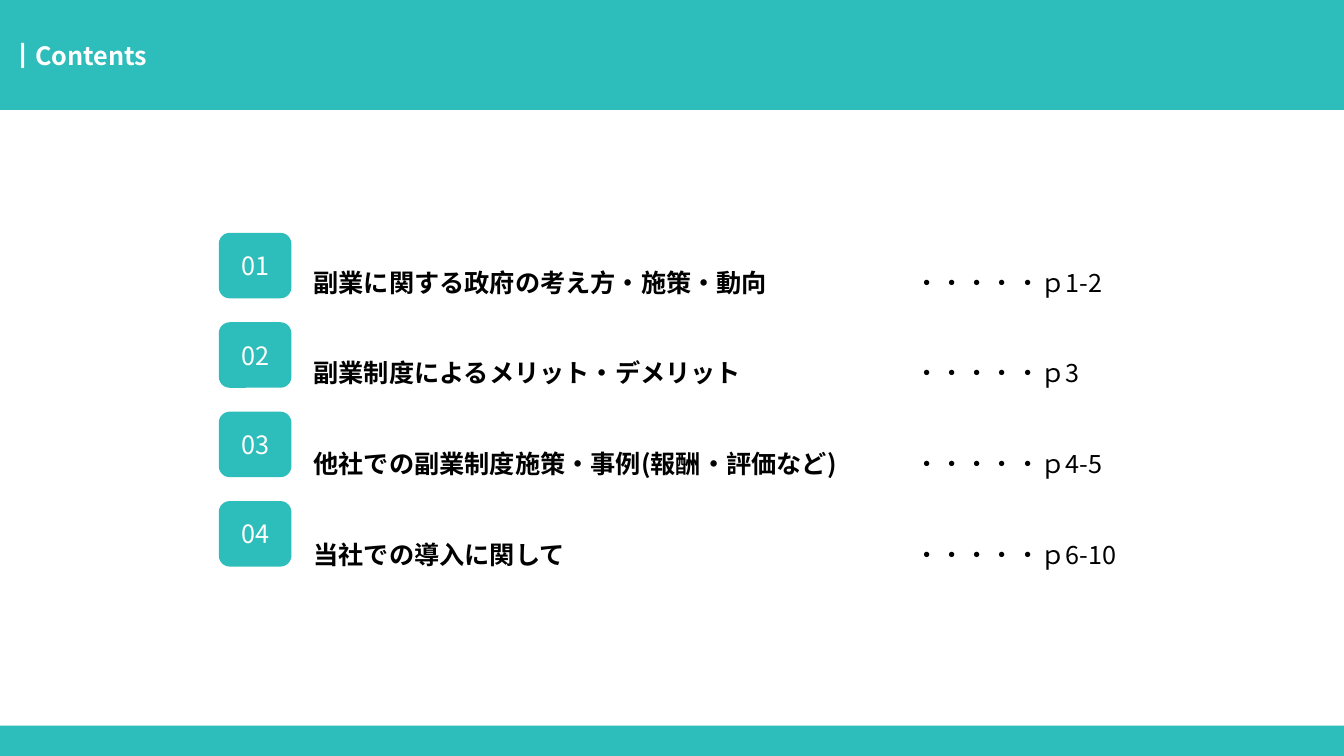
from lxml import etree
from pptx import Presentation
from pptx.dml.color import RGBColor
from pptx.enum import shapes as kinds, text as txt
from pptx.oxml import ns
from pptx.util import Inches, Pt

HEAD = "┃Contents"
ITEMS = [
    ("副業に関する政府の考え方・施策・動向", "1-2"),
    ("副業制度によるメリット・デメリット", "3"),
    ("他社での副業制度施策・事例(報酬・評価など)", "4-5"),
    ("当社での導入に関して", "6-10"),
]
DOTS = "・・・・・ｐ"
FACE = "Noto Sans CJK JP"
TEAL = RGBColor(0x2D, 0xBD, 0xBA)
WHITE = RGBColor(0xFF, 0xFF, 0xFF)
BLACK = RGBColor(0, 0, 0)
WIDE, HIGH = 13.33, 7.5
TOP, STEP = 2.31, 0.887


def place(shape, left, top, width, height):
    shape.left, shape.top = Inches(left), Inches(top)
    shape.width, shape.height = Inches(width), Inches(height)


def write(frame, lines, color, bold=False, align=txt.PP_ALIGN.LEFT, space=None):
    """Fill a frame with one paragraph per line, Latin and Japanese in one face."""
    frame.word_wrap = True
    frame.text = "\n".join(lines)
    for para in frame.paragraphs:
        para.alignment = align
        para.line_spacing = space
        font = para.font
        font.name, font.size, font.bold = FACE, Pt(18), bold
        font.color.rgb = color
        for run in para.runs:
            props = run._r.get_or_add_rPr()
            etree.SubElement(props, ns.qn("a:ea"), typeface=FACE)


def block(kind, *box):
    shape = slide.shapes.add_shape(kind, *map(Inches, box))
    shape.shadow.inherit = False
    shape.fill.solid()
    shape.fill.fore_color.rgb = TEAL
    shape.line.fill.background()
    return shape


def column(lines, left, width, bold):
    box = slide.shapes.add_textbox(*map(Inches, (left, 2, width, 3.55)))
    write(box.text_frame, lines, BLACK, bold, space=3.0)
    box.text_frame.auto_size = txt.MSO_AUTO_SIZE.SHAPE_TO_FIT_TEXT


deck = Presentation()
deck.slide_width, deck.slide_height = Inches(WIDE), Inches(HIGH)
slide = deck.slides.add_slide(deck.slide_layouts[5])

title = slide.shapes.title
place(title, 0, 0, WIDE, 1.09)
title.fill.solid()
title.fill.fore_color.rgb = TEAL
title.text_frame.auto_size = txt.MSO_AUTO_SIZE.NONE
title.text_frame.vertical_anchor = txt.MSO_ANCHOR.MIDDLE
write(title.text_frame, [HEAD], WHITE, True)

for i in range(len(ITEMS)):
    badge = block(kinds.MSO_SHAPE.ROUNDED_RECTANGLE, 2.17, TOP + i * STEP, 0.72, 0.65)
    write(badge.text_frame, [f"{i + 1:02}"], WHITE, align=txt.PP_ALIGN.CENTER)

column([name for name, _ in ITEMS], 3.01, 5.68, True)
column([DOTS + pages for _, pages in ITEMS], 8.97, 2.74, False)
block(kinds.MSO_SHAPE.RECTANGLE, 0, 7.2, WIDE, 0.3)

deck.save("out.pptx")
